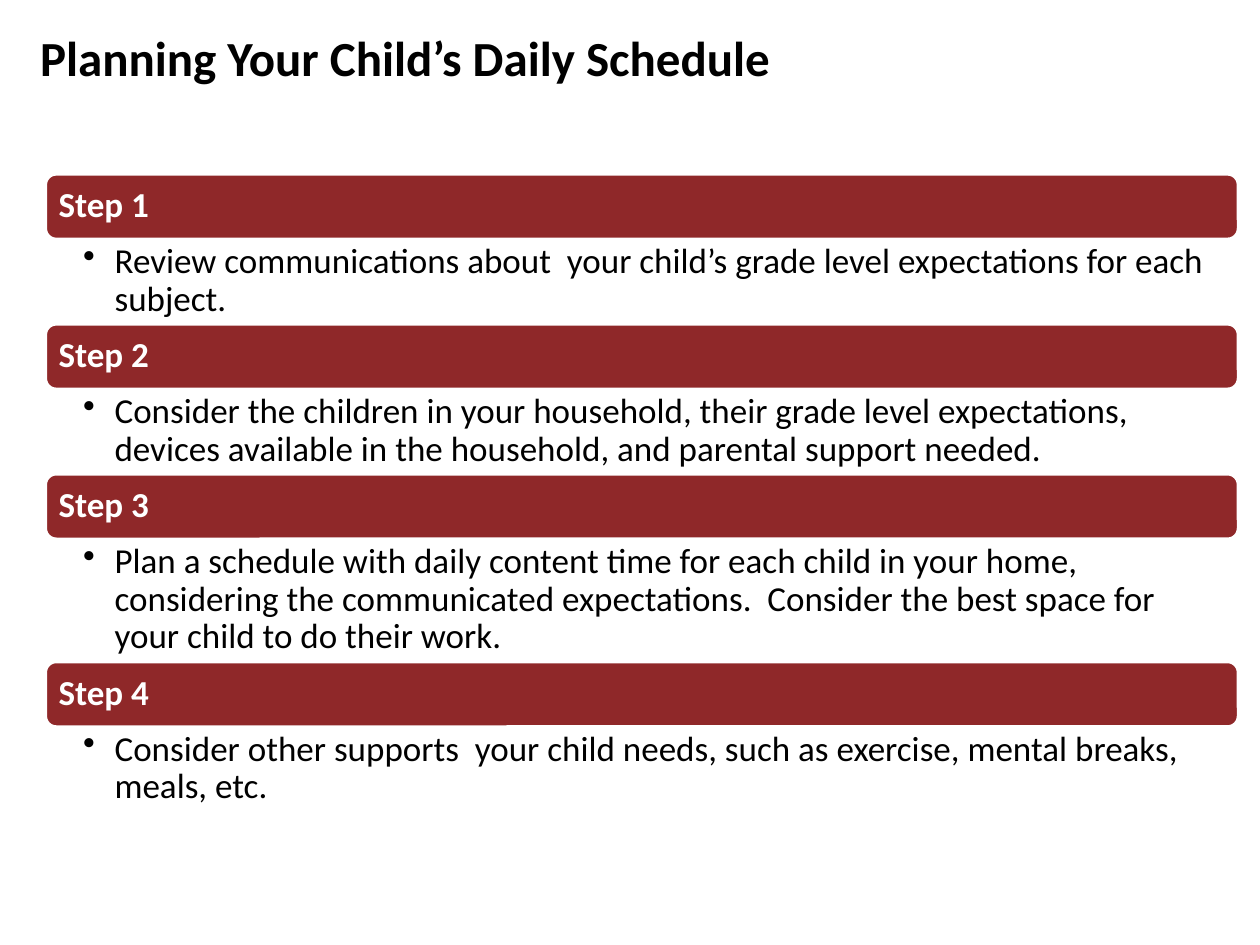
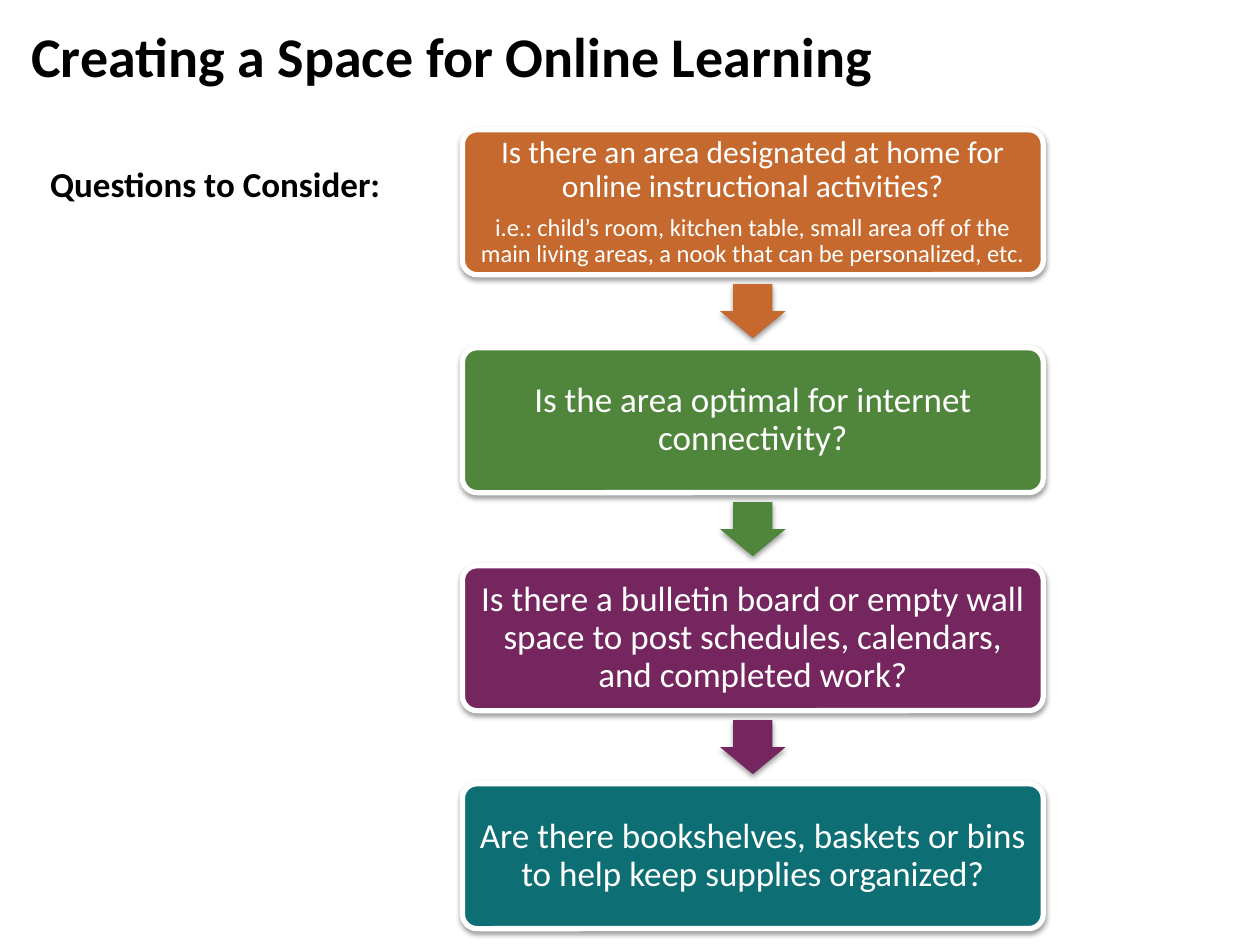
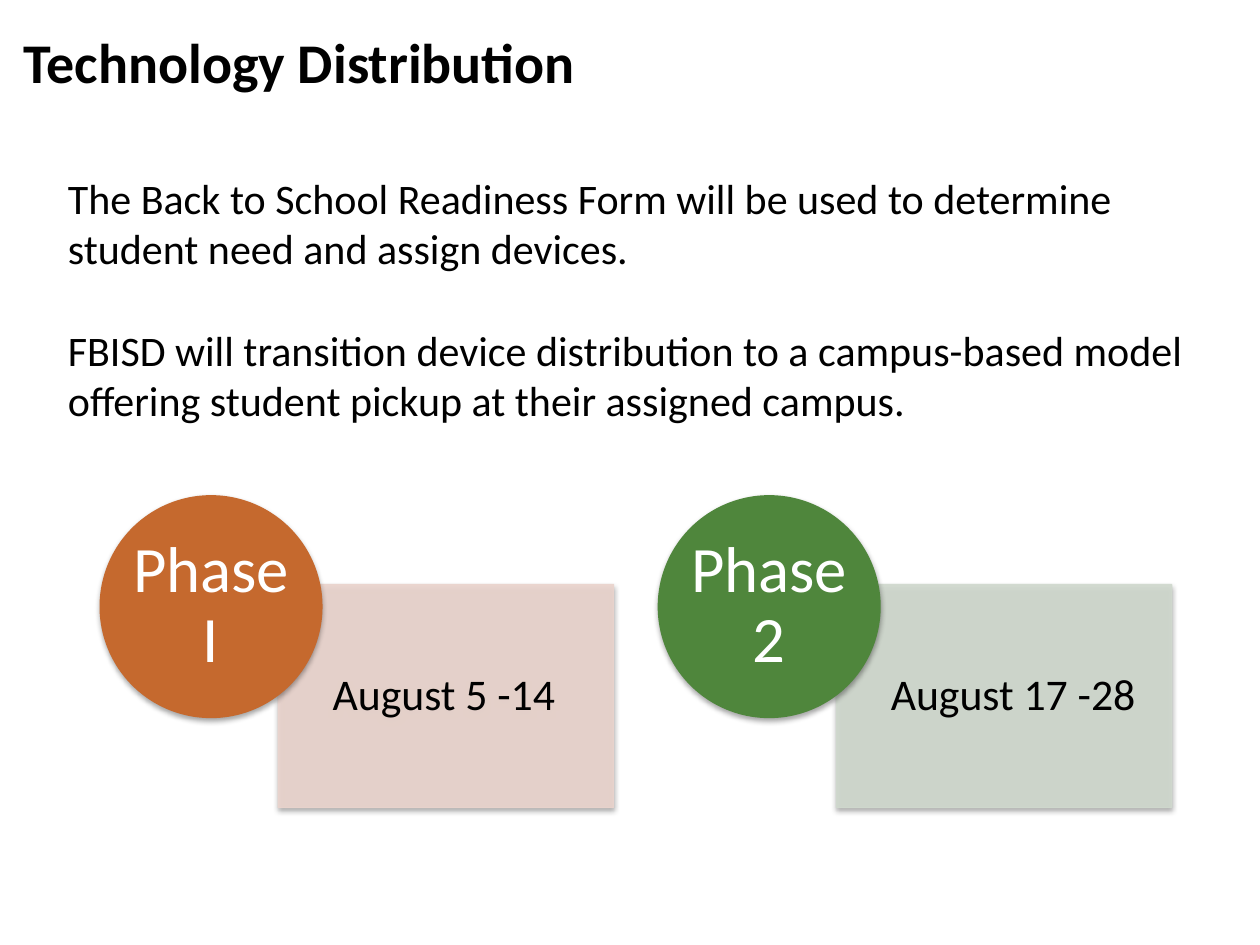
from lxml.etree import SubElement
from pptx import Presentation
from pptx.dml.color import RGBColor
from pptx.enum.shapes import MSO_SHAPE as Shape
from pptx.enum.text import MSO_ANCHOR as Anchor, PP_ALIGN as Align
from pptx.oxml.ns import qn
from pptx.util import Inches, Pt

FONT = "Calibri"
COLORS = {
    "black": "000000", "white": "FFFFFF", "maroon": "8F2829",
    "orange": "C5692E", "green": "4F863C", "plum": "76265F", "teal": "0D6F74",
    "pale orange": "EAD4CD", "pale green": "D0D9CE",
}

# Step details with the number of lines each one needs
STEPS = [
    ("Review communications about  your child’s grade level expectations for each subject.", 2),
    ("Consider the children in your household, their grade level expectations, devices "
     "available in the household, and parental support needed.", 2),
    ("Plan a schedule with daily content time for each child in your home, considering the "
     "communicated expectations.  Consider the best space for your child to do their work.", 3),
    ("Consider other supports  your child needs, such as exercise, mental breaks, meals, etc.", 2),
]
# Fill colour, then paragraphs as (text, size)
QUESTIONS = [
    ("orange", [("Is there an area designated at home for online instructional activities?", 18),
                ("i.e.: child’s room, kitchen table, small area off of the main living areas, "
                 "a nook that can be personalized, etc.", 14)]),
    ("green", [("Is the area optimal for internet connectivity?", 20)]),
    ("plum", [("Is there a bulletin board or empty wall space to post schedules, calendars, "
               "and completed work?", 20)]),
    ("teal", [("Are there bookshelves, baskets or bins to help keep supplies organized?", 20)]),
]
DISTRIBUTION = [
    ("The Back to School Readiness Form will be used to determine student need and "
     "assign devices.", 24),
    ("FBISD will transition device distribution to a campus-based model offering student "
     "pickup at their assigned campus.", 24),
]
PHASES = [
    ("Phase I", "August 5 -14", "orange", "pale orange"),
    ("Phase 2", "August 17 -28", "green", "pale green"),
]


def rgb(name):
    return RGBColor.from_string(COLORS[name])


def write(shape, paragraphs, color="black", bold=False, align=Align.LEFT, anchor=Anchor.TOP,
          insets=(0.1, 0.05, 0.1, 0.05), spacing=None, gap=0, bullet=False):
    """Fill a shape with (text, size) paragraphs; insets run left, top, right, bottom."""
    frame = shape.text_frame
    frame.word_wrap = True
    frame.vertical_anchor = anchor
    for side, inset in zip(("left", "top", "right", "bottom"), insets):
        setattr(frame, f"margin_{side}", Inches(inset))
    for index, (text, size) in enumerate(paragraphs):
        para = frame.add_paragraph() if index else frame.paragraphs[0]
        if bullet:
            properties = para._p.get_or_add_pPr()
            properties.set("marL", str(Inches(0.25)))
            properties.set("indent", str(-Inches(0.25)))
            SubElement(properties, qn("a:buChar"), char="•")
        para.alignment = align
        if spacing:
            para.line_spacing = spacing
        if index:
            para.space_before = Pt(gap)
        span = para.add_run()
        span.text = text
        for name, value in {"name": FONT, "size": Pt(size), "bold": bold}.items():
            setattr(span.font, name, value)
        span.font.color.rgb = rgb(color)


def add_text(page, at, paragraphs, **style):
    box = page.shapes.add_textbox(*map(Inches, at))
    write(box, paragraphs, **style)


def add_shape(page, kind, at, fill, line=None, width=0, adjust=(), opacity=None, shadow=None):
    """Add a preset shape; shadow is (opacity percent, distance in points)."""
    shape = page.shapes.add_shape(kind, *map(Inches, at))
    for index, value in enumerate(adjust):
        shape.adjustments[index] = value
    shape.fill.solid()
    shape.fill.fore_color.rgb = rgb(fill)
    if line:
        shape.line.color.rgb = rgb(line)
        shape.line.width = Pt(width)
    else:
        shape.line.fill.background()
    properties = shape._element.spPr
    if opacity:
        for color in list(properties.iter(qn("a:srgbClr"))):
            SubElement(color, qn("a:alpha"), val=str(opacity * 1000))
    shape.shadow.inherit = False
    if shadow:
        strength, distance = shadow
        outer = SubElement(properties.find(qn("a:effectLst")), qn("a:outerShdw"),
                           blurRad=str(Pt(3.1)), dist=str(Pt(distance)),
                           dir="5400000", rotWithShape="0")
        color = SubElement(outer, qn("a:srgbClr"), val=COLORS["black"])
        SubElement(color, qn("a:alpha"), val=str(strength * 1000))
    return shape


def add_page(deck, title, at, size=32, **style):
    page = deck.slides.add_slide(deck.slide_layouts[6])
    add_text(page, at, [(title, size)], bold=True, **style)
    return page


def build_schedule(deck):
    page = add_page(deck, "Planning Your Child’s Daily Schedule", (0.22, 0, 7.41, 0.97),
                    size=28, anchor=Anchor.MIDDLE, spacing=0.9)
    left, top, width, bar_height = 0.36, 1.38, 9.47, 0.52
    for number, (detail, lines) in enumerate(STEPS, 1):
        bar = add_shape(page, Shape.ROUNDED_RECTANGLE, (left, top, width, bar_height),
                        "maroon", "white", 2)
        write(bar, [(f"Step {number}", 20)], color="white", bold=True,
              anchor=Anchor.MIDDLE, insets=(0.08,) * 4, spacing=0.9)
        top += bar_height
        detail_height = 0.07 + 0.3 * lines
        add_text(page, (left, top, width, detail_height), [(detail, 20)],
                 insets=(0.3, 0.03, 0.16, 0.03), spacing=0.9, bullet=True)
        top += detail_height


def build_space(deck):
    page = add_page(deck, "Creating a Space for Online Learning", (0.15, 0.12, 7.03, 0.64))
    add_text(page, (0.3, 1.24, 3.27, 0.44), [("Questions to Consider:", 20)], bold=True)
    left, first_top, width, height, pitch = 3.67, 1.03, 4.61, 1.15, 1.73
    arrow_width, arrow_height = 0.52, 0.43
    shadow = (38, 1.6)
    for index, (color, paragraphs) in enumerate(QUESTIONS):
        top = first_top + index * pitch
        card = add_shape(page, Shape.ROUNDED_RECTANGLE, (left, top, width, height), color,
                         "white", 3, adjust=(0.1,), shadow=shadow)
        write(card, paragraphs, color="white", align=Align.CENTER, anchor=Anchor.MIDDLE,
              insets=(0.07,) * 4, spacing=0.9, gap=6)
        if index < len(QUESTIONS) - 1:
            arrow_left = left + (width - arrow_width) / 2
            arrow_top = top + (height + pitch - arrow_height) / 2
            add_shape(page, Shape.DOWN_ARROW, (arrow_left, arrow_top, arrow_width, arrow_height),
                      color, adjust=(0.6, 0.5), shadow=shadow)


def build_distribution(deck):
    page = add_page(deck, "Technology Distribution", (0.09, 0.17, 5.79, 0.64))
    add_text(page, (0.44, 1.32, 9.22, 2.13), DISTRIBUTION, gap=29)
    first_left, top, pitch, diameter = 0.79, 3.93, 4.43, 1.77
    shadow = (35, 1.8)
    for index, (phase, dates, color, pale) in enumerate(PHASES):
        left = first_left + index * pitch
        panel = add_shape(page, Shape.RECTANGLE, (left + 1.42, top + 0.71, 2.66, diameter), pale,
                          pale, 0.75, opacity=90, shadow=shadow)
        write(panel, [(dates, 25)], anchor=Anchor.MIDDLE,
              insets=(0.43, 0.19, 0.19, 0.19), spacing=0.9)
        circle = add_shape(page, Shape.OVAL, (left, top, diameter, diameter), color,
                           shadow=shadow)
        write(circle, [(phase, 37)], color="white", align=Align.CENTER,
              anchor=Anchor.MIDDLE, insets=(0,) * 4, spacing=0.9)


def main():
    deck = Presentation()
    deck.slide_width, deck.slide_height = Inches(10), Inches(7.5)
    for build in (build_schedule, build_space, build_distribution):
        build(deck)
    deck.save("out.pptx")


if __name__ == "__main__":
    main()
